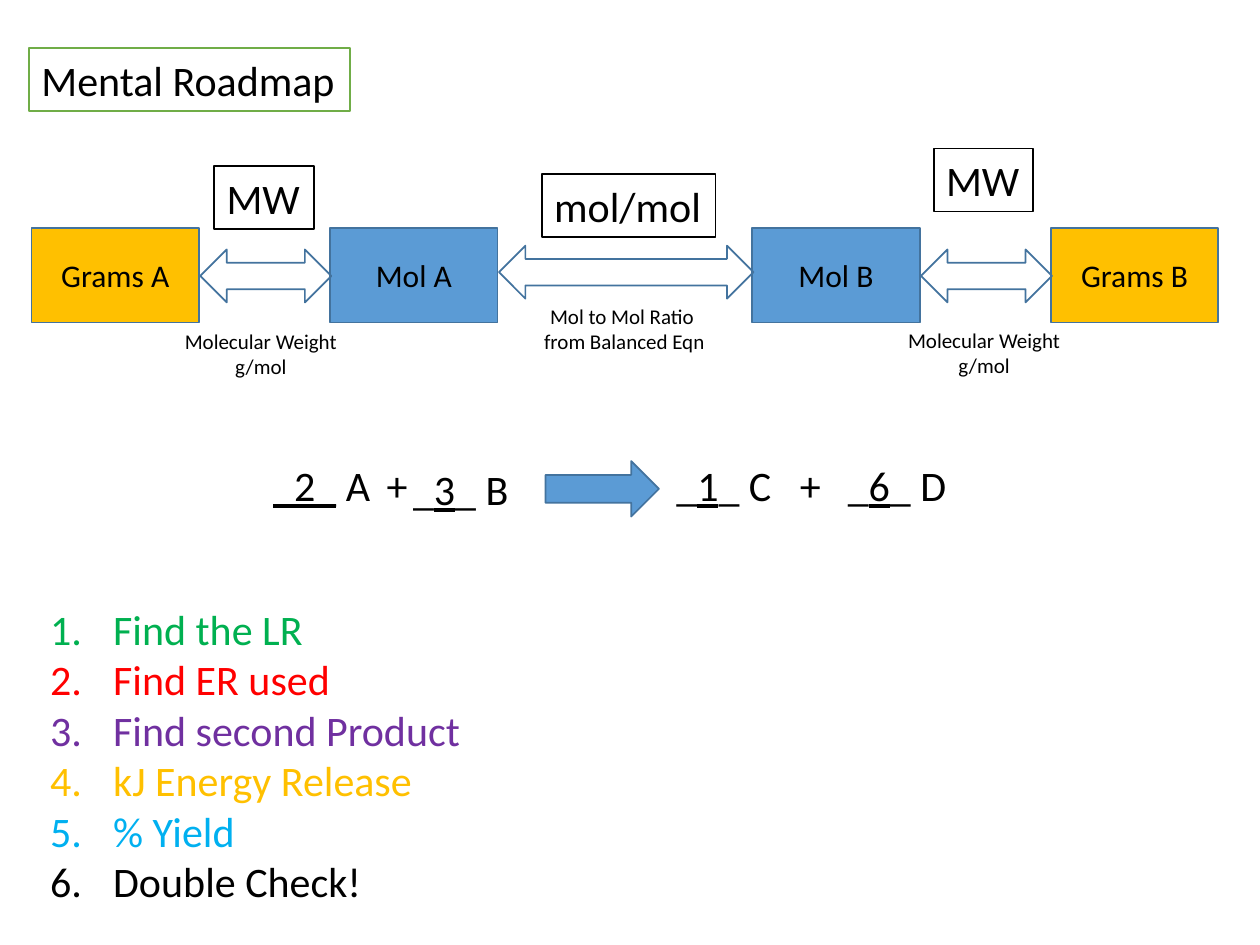
from lxml.etree import SubElement
from pptx import Presentation
from pptx.dml.color import RGBColor
from pptx.enum.shapes import MSO_SHAPE as Preset
from pptx.enum.text import MSO_ANCHOR as Anchor, MSO_AUTO_SIZE as AutoSize, PP_ALIGN as Align
from pptx.oxml.ns import qn
from pptx.util import Inches, Pt

COLORS = {
    "black": "000000", "white": "FFFFFF", "blue": "5B9BD5", "outline": "43739E",
    "gold": "FFC000", "leaf": "70AD47", "green": "00B050", "red": "FF0000",
    "purple": "7030A0", "sky": "00B0F0",
}


class RoadmapSlide:
    """Holds the style and the current slide, and draws each kind of element."""

    font = "Calibri"

    def __init__(self, slide):
        self.slide = slide
        self.shapes = slide.shapes

    def start_group(self):
        self.shapes = self.slide.shapes.add_group_shape().shapes

    def end_group(self):
        self.shapes = self.slide.shapes

    def color(self, name):
        return RGBColor.from_string(COLORS[name])

    def run(self, paragraph, text, size, color="black", underline=False):
        run = paragraph.add_run()
        run.text = text
        run.font.name = self.font
        run.font.size = Pt(size)
        run.font.color.rgb = self.color(color)
        if underline:
            run.font.underline = True

    def shape(self, preset, box, fill=None, line="outline"):
        shape = self.shapes.add_shape(preset, *map(Inches, box))
        shape.shadow.inherit = False
        if fill:
            shape.fill.solid()
            shape.fill.fore_color.rgb = self.color(fill)
        else:
            shape.fill.background()
        shape.line.color.rgb = self.color(line)
        shape.line.width = Pt(1)
        return shape

    def fit(self, shape):
        frame = shape.text_frame
        frame.word_wrap = False
        frame.auto_size = AutoSize.SHAPE_TO_FIT_TEXT
        frame.vertical_anchor = Anchor.TOP
        return frame

    def paragraphs(self, frame, count, align=Align.LEFT):
        for _ in range(count - 1):
            frame.add_paragraph()
        for paragraph in frame.paragraphs:
            paragraph.alignment = align
        return frame.paragraphs

    def step(self, text, box, fill):
        frame = self.shape(Preset.RECTANGLE, box, fill).text_frame
        frame.vertical_anchor = Anchor.MIDDLE
        self.run(self.paragraphs(frame, 1, Align.CENTER)[0], text, 18)

    def label(self, text, box, line="black"):
        frame = self.fit(self.shape(Preset.RECTANGLE, box, "white", line))
        self.run(self.paragraphs(frame, 1)[0], text, 24)

    def text_frame(self, box):
        return self.fit(self.shapes.add_textbox(*map(Inches, box)))

    def caption(self, lines, box):
        paragraphs = self.paragraphs(self.text_frame(box), len(lines), Align.CENTER)
        for paragraph, line in zip(paragraphs, lines):
            self.run(paragraph, line, 12)

    def term(self, parts, box):
        paragraph = self.paragraphs(self.text_frame(box), 1)[0]
        for text, underline in parts:
            self.run(paragraph, text, 24, underline=underline)

    def numbered_list(self, items, box):
        paragraphs = self.paragraphs(self.text_frame(box), len(items))
        for paragraph, (text, color) in zip(paragraphs, items):
            self.run(paragraph, text, 24, color)
            properties = paragraph._p.get_or_add_pPr()
            properties.set("marL", str(Inches(0.5)))
            properties.set("indent", str(Inches(-0.5)))
            SubElement(properties, qn("a:buFont"), typeface=self.font)
            SubElement(properties, qn("a:buAutoNum"), type="arabicPeriod")


def main():
    presentation = Presentation()
    presentation.slide_width = Inches(10)
    presentation.slide_height = Inches(7.5)
    roadmap = RoadmapSlide(presentation.slides.add_slide(presentation.slide_layouts[6]))

    roadmap.start_group()
    for text, left, fill in [("Mol A", 2.62, "blue"), ("Mol B", 5.97, "blue"),
                             ("Grams A", 0.25, "gold"), ("Grams B", 8.34, "gold")]:
        roadmap.step(text, (left, 1.81, 1.33, 0.75), fill)
    for left, top, width in [(3.96, 1.95, 2.02), (1.59, 1.98, 1.04), (7.31, 1.98, 1.04)]:
        roadmap.shape(Preset.LEFT_RIGHT_ARROW, (left, top, width, 0.42))
    weight = ["Molecular Weight", "g/mol"]
    for lines, left, top, width in [
        (["Mol to Mol Ratio ", "from Balanced Eqn"], 4.21, 2.36, 1.49),
        (weight, 1.36, 2.56, 1.42),
        (weight, 7.1, 2.55, 1.42),
    ]:
        roadmap.caption(lines, (left, top, width, 0.5))
    for text, left, top, width in [("MW", 1.7, 1.32, 0.79), ("MW", 7.41, 1.18, 0.79),
                                   ("mol/mol", 4.3, 1.38, 1.38)]:
        roadmap.label(text, (left, top, width, 0.5))
    roadmap.end_group()

    roadmap.label("Mental Roadmap", (0.23, 0.38, 2.55, 0.5), "leaf")

    roadmap.start_group()
    roadmap.shape(Preset.RIGHT_ARROW, (4.33, 3.66, 0.9, 0.44), "blue")
    for parts, left, top, width in [
        ([("+", False)], 2.97, 3.6, 0.37),
        ([("_", False), ("3", True), ("_ B", False)], 3.18, 3.63, 0.97),
        ([("_", False), ("1", True), ("_ C", False)], 5.27, 3.6, 0.96),
        ([("+", False)], 6.25, 3.6, 0.37),
        ([("_2_", True), (" A", False)], 2.07, 3.6, 0.98),
        ([("_", False), ("6", True), ("_ D", False)], 6.63, 3.6, 0.99),
    ]:
        roadmap.term(parts, (left, top, width, 0.5))
    roadmap.end_group()

    roadmap.numbered_list([
        ("Find the LR", "green"), ("Find ER used", "red"),
        ("Find second Product", "purple"), ("kJ Energy Release", "gold"),
        ("% Yield", "sky"), ("Double Check!", "black"),
    ], (0.3, 4.74, 3.48, 2.52))

    presentation.save("out.pptx")


if __name__ == "__main__":
    main()
